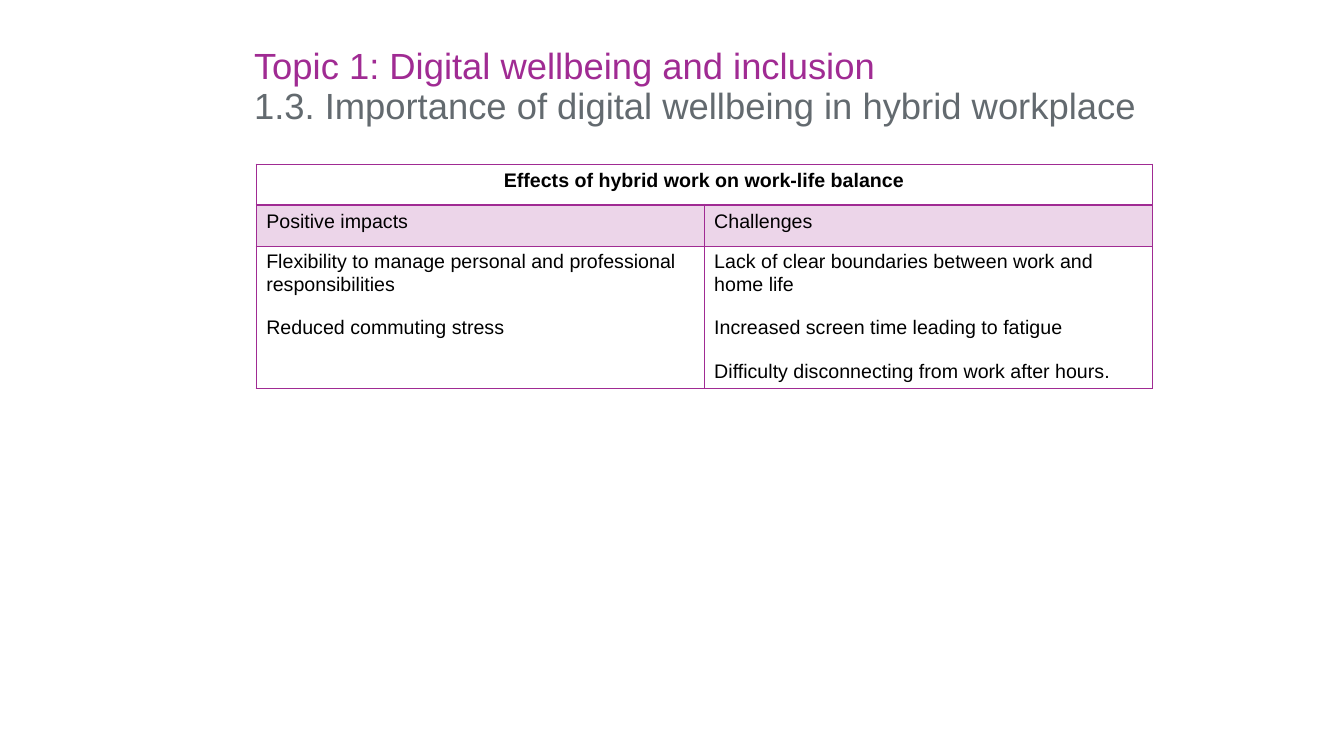
from dataclasses import dataclass

from lxml import etree
from pptx import Presentation
from pptx.dml.color import RGBColor
from pptx.enum import text
from pptx.oxml import ns
from pptx.util import Pt


@dataclass(frozen=True)
class Theme:
    """Colours, font and type sizes of the deck."""
    plum: str = "A02B93"
    grey: str = "636A6F"
    ink: str = "000000"
    tint: str = "ECD5E9"
    face: str = "Arial"
    head: int = 26
    body: int = 14


THEME = Theme()
TITLE = [
    ("Topic 1: Digital wellbeing and inclusion", THEME.plum),
    ("1.3. Importance of digital wellbeing in hybrid workplace", THEME.grey),
]
EFFECTS = [
    [["Effects of hybrid work on work-life balance"], []],
    [["Positive impacts"], ["Challenges"]],
    [
        ["Flexibility to manage personal and professional responsibilities",
         "Reduced commuting stress"],
        ["Lack of clear boundaries between work and home life",
         "Increased screen time leading to fatigue",
         "Difficulty disconnecting from work after hours."],
    ],
]


def style(para, size, color, bold=False):
    """Set the font of a whole paragraph."""
    font = para.font
    font.name, font.size, font.bold = THEME.face, Pt(size), bold
    font.color.rgb = RGBColor.from_string(color)


def write(frame, lines):
    """Fill a text frame with one paragraph per line and return them."""
    frame.text = "\n".join(lines)
    return frame.paragraphs


def edge(cell, widths):
    """Draw the cell borders, given a width in points for each side."""
    props = cell._tc.get_or_add_tcPr()
    for spot, (side, width) in enumerate(widths.items()):
        line = etree.Element(ns.qn(f"a:ln{side}"), w=str(Pt(width)))
        fill = etree.SubElement(line, ns.qn("a:solidFill"))
        etree.SubElement(fill, ns.qn("a:srgbClr"), val=THEME.plum)
        props.insert(spot, line)


def add_title(slide, left, top, width, height):
    """Place the two-tone title in its box."""
    shape = slide.shapes.title
    shape.left, shape.top = Pt(left), Pt(top)
    shape.width, shape.height = Pt(width), Pt(height)
    frame = shape.text_frame
    frame.word_wrap = True
    frame.auto_size = text.MSO_AUTO_SIZE.NONE
    frame.vertical_anchor = text.MSO_ANCHOR.TOP
    paras = write(frame, [line for line, _ in TITLE])
    for para, (_, color) in zip(paras, TITLE):
        para.alignment = text.PP_ALIGN.LEFT
        para.line_spacing = 0.9
        style(para, THEME.head, color)


def add_effects(slide, left, top, width, height, band=29.25):
    """Place the effects table, with two bands above the lists."""
    rows, cols = len(EFFECTS), len(EFFECTS[0])
    table = slide.shapes.add_table(
        rows, cols, Pt(left), Pt(top), Pt(width), Pt(height)).table
    table.first_row = table.horz_banding = False
    for row in range(rows):
        last = row == rows - 1
        table.rows[row].height = Pt(height - band * row if last else band)
        for col in range(cols):
            cell = table.cell(row, col)
            if row == 1:
                cell.fill.solid()
                cell.fill.fore_color.rgb = RGBColor.from_string(THEME.tint)
            else:
                cell.fill.background()
            edge(cell, {"L": 1, "R": 1, "T": 2 if row == 1 else 1,
                        "B": 2 if row == 0 else 1})
            for spot, para in enumerate(write(cell.text_frame, EFFECTS[row][col])):
                if row == 0:
                    para.alignment = text.PP_ALIGN.CENTER
                if spot:
                    para.space_before = Pt(15.5)
                style(para, THEME.body, THEME.ink, bold=row == 0)
    table.cell(0, 0).merge(table.cell(0, cols - 1))


def main():
    """Build the slide and save it."""
    deck = Presentation()
    deck.slide_width, deck.slide_height = Pt(960), Pt(540)
    slide = deck.slides.add_slide(deck.slide_layouts[5])
    add_title(slide, 174.25, 31, 776, 73.5)
    add_effects(slide, 183, 117.35, 640, 160)
    deck.save("out.pptx")


if __name__ == "__main__":
    main()
